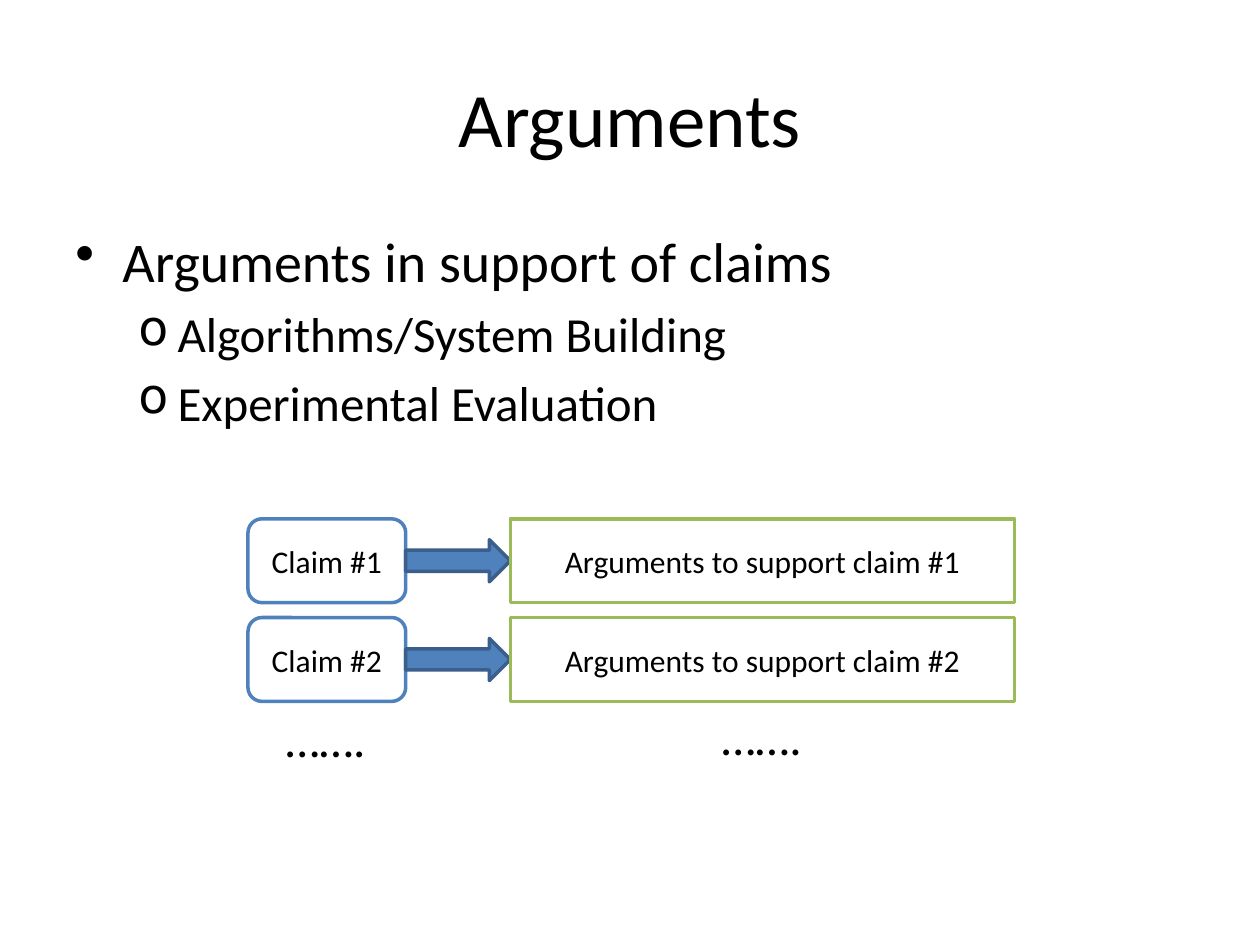
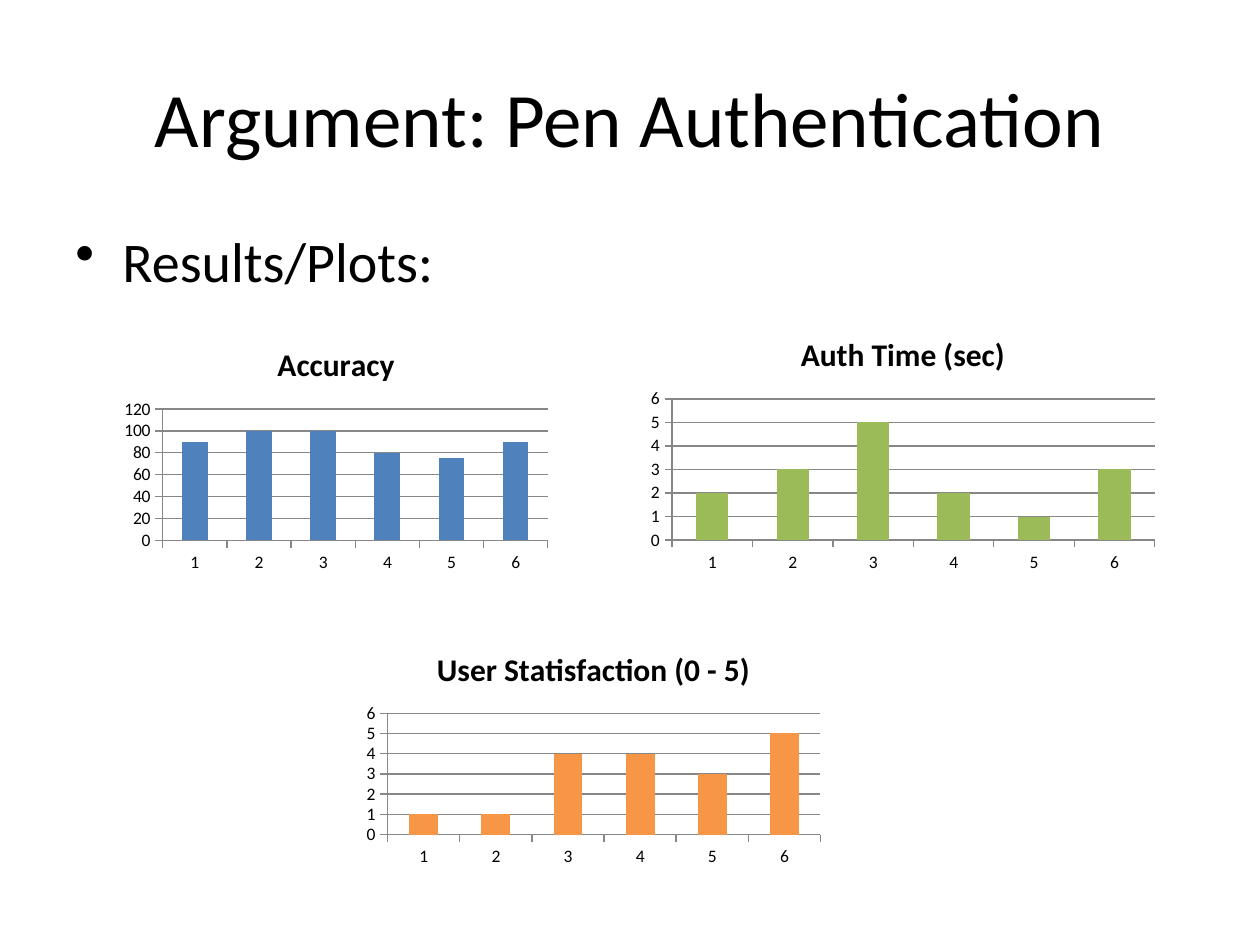
from dataclasses import dataclass

from lxml import etree
from pptx import Presentation
from pptx.chart.data import CategoryChartData
from pptx.dml.color import RGBColor
from pptx.enum.chart import XL_CHART_TYPE, XL_TICK_MARK
from pptx.enum.shapes import MSO_SHAPE
from pptx.enum.text import MSO_ANCHOR, MSO_AUTO_SIZE, PP_ALIGN
from pptx.oxml.ns import qn
from pptx.util import Cm, Pt

CENTER = PP_ALIGN.CENTER
LEFT = PP_ALIGN.LEFT
MIDDLE = MSO_ANCHOR.MIDDLE
TOP = MSO_ANCHOR.TOP
FIT_SHAPE = MSO_AUTO_SIZE.SHAPE_TO_FIT_TEXT
ROUNDED = MSO_SHAPE.ROUNDED_RECTANGLE
RECTANGLE = MSO_SHAPE.RECTANGLE
ARROW = MSO_SHAPE.RIGHT_ARROW
COLUMNS = XL_CHART_TYPE.COLUMN_CLUSTERED
TICK_OUT = XL_TICK_MARK.OUTSIDE


@dataclass(frozen=True)
class Theme:
    font: str = "Calibri"
    text: RGBColor = RGBColor.from_string("000000")
    paper: RGBColor = RGBColor.from_string("FFFFFF")
    blue: RGBColor = RGBColor.from_string("4F81BD")
    dark_blue: RGBColor = RGBColor.from_string("3A5F8C")
    green: RGBColor = RGBColor.from_string("9BBB59")
    orange: RGBColor = RGBColor.from_string("F79646")
    axis: RGBColor = RGBColor.from_string("878787")
    title_size: int = 44
    body_size: int = 32
    sub_size: int = 28
    label_size: int = 18
    chart_size: int = 10


THEME = Theme()
LEVELS = (
    ("•", THEME.body_size, Cm(0.95), Cm(-0.95)),
    ("o", THEME.sub_size, Cm(2.06), Cm(-0.79)),
)


def style_font(font, size, bold=False):
    font.name = THEME.font
    font.size = Pt(size)
    font.bold = bold
    font.color.rgb = THEME.text


def add_run(p, text, size, align=LEFT, bold=False):
    p.alignment = align
    r = p.add_run()
    r.text = text
    style_font(r.font, size, bold)


def add_text_box(s, left, top, width, height, anchor=TOP, wrap=True):
    tf = s.shapes.add_textbox(Cm(left), Cm(top), Cm(width), Cm(height)).text_frame
    tf.word_wrap = wrap
    tf.vertical_anchor = anchor
    return tf


def add_bullets(s, items):
    tf = add_text_box(s, 1.27, 4.45, 22.86, 12.57)
    for i, (level, text) in enumerate(items):
        p = tf.add_paragraph() if i else tf.paragraphs[0]
        mark, size, margin, indent = LEVELS[level]
        p.level = level
        p.space_before = Pt(size * 0.2)
        add_run(p, text, size)
        pPr = p._p.get_or_add_pPr()
        pPr.set("marL", str(margin))
        pPr.set("indent", str(indent))
        etree.SubElement(pPr, qn("a:buChar")).set("char", mark)


def add_content_slide(prs, title, items):
    s = prs.slides.add_slide(prs.slide_layouts[6])
    tf = add_text_box(s, 1.27, 0.76, 22.86, 3.18, MIDDLE)
    add_run(tf.paragraphs[0], title, THEME.title_size, CENTER)
    add_bullets(s, items)
    return s


def add_box(s, kind, left, top, width, height, fill, line, text=None):
    sp = s.shapes.add_shape(kind, Cm(left), Cm(top), Cm(width), Cm(height))
    sp.shadow.inherit = False
    sp.fill.solid()
    sp.fill.fore_color.rgb = fill
    sp.line.color.rgb = line
    sp.line.width = Pt(2)
    if text:
        tf = sp.text_frame
        tf.vertical_anchor = MIDDLE
        add_run(tf.paragraphs[0], text, THEME.label_size, CENTER)


def add_claim_row(s, number, top):
    add_box(s, ROUNDED, 5, top, 3.18, 1.69, THEME.paper, THEME.blue,
            f"Claim #{number}")
    add_box(s, ARROW, 8.18, top + 0.42, 2.11, 0.85, THEME.blue, THEME.dark_blue)
    add_box(s, RECTANGLE, 10.29, top, 10.16, 1.69, THEME.paper, THEME.green,
            f"Arguments to support claim #{number}")


def add_ellipsis(s, left, top):
    tf = add_text_box(s, left, top, 2.16, 1.45, wrap=False)
    tf.auto_size = FIT_SHAPE
    add_run(tf.paragraphs[0], "…….", THEME.sub_size)


def style_line(line):
    line.color.rgb = THEME.axis
    line.width = Pt(0.75)


def add_column_chart(s, title, values, color, left, top, width, height):
    data = CategoryChartData()
    data.categories = [str(n) for n in range(1, len(values) + 1)]
    data.add_series(title, values)
    chart = s.shapes.add_chart(
        COLUMNS, Cm(left), Cm(top), Cm(width), Cm(height), data).chart
    style_font(chart.font, THEME.chart_size)
    chart.has_legend = False
    chart.has_title = True
    chart.chart_title.include_in_layout = False
    add_run(chart.chart_title.text_frame.paragraphs[0], title,
            THEME.label_size, CENTER, True)
    for axis in (chart.category_axis, chart.value_axis):
        axis.major_tick_mark = TICK_OUT
        style_line(axis.format.line)
    chart.value_axis.has_major_gridlines = True
    style_line(chart.value_axis.major_gridlines.format.line)
    plot = chart.plots[0]
    plot.gap_width = 150
    plot.vary_by_categories = False
    fill = plot.series[0].format.fill
    fill.solid()
    fill.fore_color.rgb = color


def build_arguments(prs):
    s = add_content_slide(prs, "Arguments", [
        (0, "Arguments in support of claims"),
        (1, "Algorithms/System Building"),
        (1, "Experimental Evaluation"),
    ])
    for i in range(2):
        add_claim_row(s, i + 1, 10.46 + 1.99 * i)
    add_ellipsis(s, 5.51, 14.15)
    add_ellipsis(s, 14.3, 14.12)


def build_pen_authentication(prs):
    s = add_content_slide(prs, "Argument: Pen Authentication",
                          [(0, "Results/Plots:")])
    add_column_chart(s, "Accuracy", (90, 100, 100, 80, 75, 90),
                     THEME.blue, 2.33, 6.56, 8.89, 5.08)
    add_column_chart(s, "Auth Time (sec)", (2, 3, 5, 2, 1, 3),
                     THEME.green, 12.91, 6.35, 10.58, 5.29)
    add_column_chart(s, "User Statisfaction (0 - 5)", (1, 1, 4, 4, 3, 5),
                     THEME.orange, 7.2, 12.7, 9.53, 4.87)


def main():
    prs = Presentation()
    prs.slide_width = Cm(25.4)
    prs.slide_height = Cm(19.05)
    build_arguments(prs)
    build_pen_authentication(prs)
    prs.save("out.pptx")


if __name__ == "__main__":
    main()
